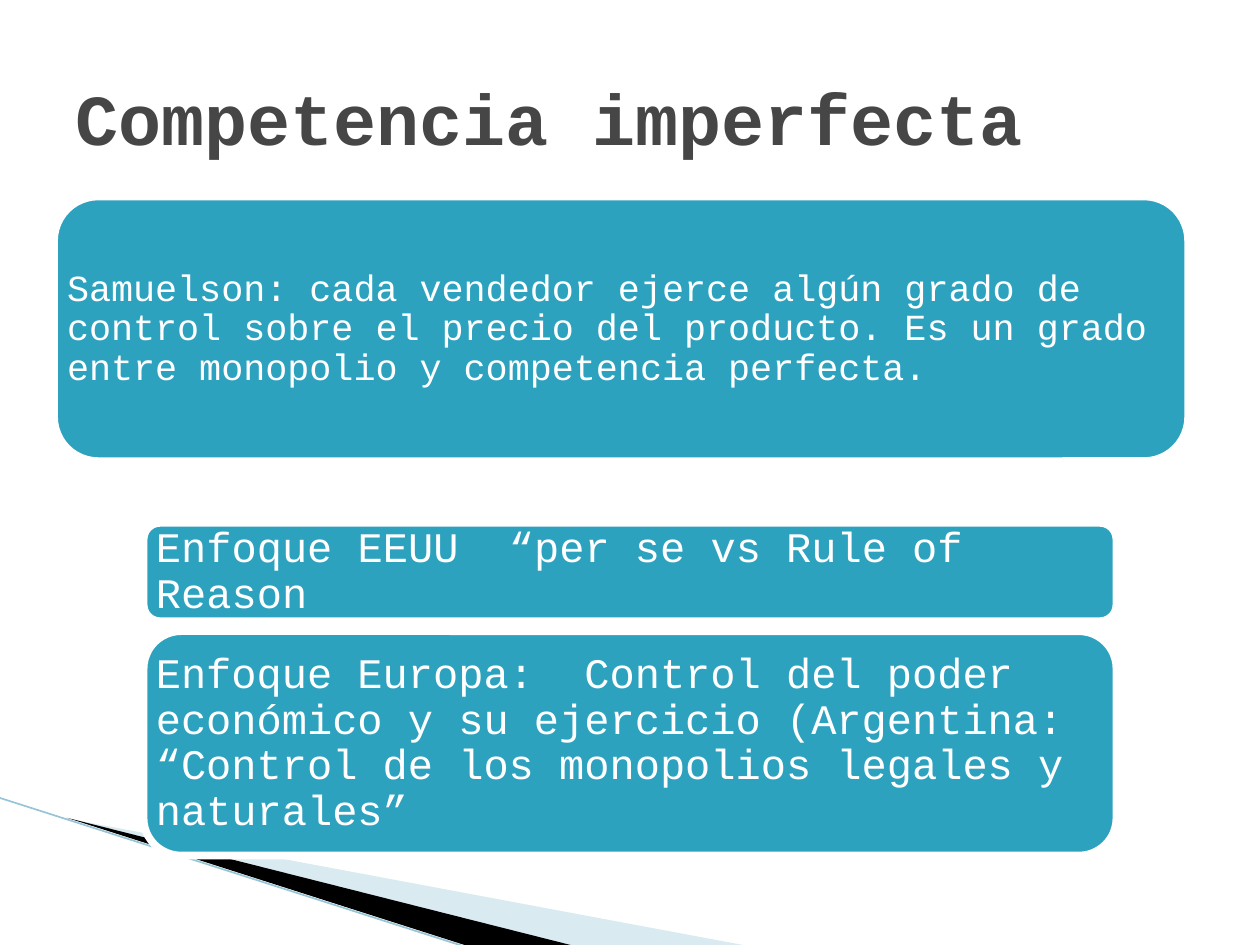
from lxml.etree import SubElement
from pptx import Presentation
from pptx.dml.color import RGBColor
from pptx.enum.shapes import MSO_CONNECTOR, MSO_SHAPE
from pptx.enum.text import MSO_ANCHOR, MSO_AUTO_SIZE, PP_ALIGN
from pptx.oxml.ns import qn
from pptx.util import Inches, Pt


def color(value):
    return RGBColor.from_string(value)


def write_text(shape, text, frame_format, paragraph_format, font_format, font_color):
    frame = shape.text_frame
    frame.text = text
    paragraph = frame.paragraphs[0]
    for target, values in (
        (frame, frame_format),
        (paragraph, paragraph_format),
        (paragraph.font, font_format),
    ):
        for name, value in values.items():
            setattr(target, name, value)
    paragraph.font.color.rgb = color(font_color)


presentation = Presentation()
presentation.slide_width = Inches(10)
presentation.slide_height = Inches(7.5)
slide = presentation.slides.add_slide(presentation.slide_layouts[5])
shapes = slide.shapes

wedges = [
    ("A0CBDC", 40, [(0.55, 6.5), (5.95, 7.51), (4.56, 7.51)]),
    ("000000", 100, [(0.53, 6.49), (4.57, 7.51), (3.72, 7.51)]),
]
for fill, opacity, points in wedges:
    corners = [(Inches(x), Inches(y)) for x, y in points]
    builder = shapes.build_freeform(*corners[0])
    builder.add_line_segments(corners[1:], close=True)
    wedge = builder.convert_to_shape()
    wedge.shadow.inherit = False
    wedge.fill.solid()
    wedge.fill.fore_color.rgb = color(fill)
    wedge.line.fill.background()
    if opacity < 100:
        fill_color = wedge.fill._xPr.find(qn("a:solidFill"))[0]
        SubElement(fill_color, qn("a:alpha"), val=str(opacity * 1000))

diagonal = shapes.add_connector(
    MSO_CONNECTOR.STRAIGHT, Inches(-0.01), Inches(6.33), Inches(3.71), Inches(7.52)
)
diagonal.line.color.rgb = color("97C5D8")
diagonal.line.width = Pt(0.95)
SubElement(diagonal._element.spPr, qn("a:effectLst"))

title = shapes.title
title.left, title.top = Inches(0.5), Inches(0.3)
title.width, title.height = Inches(9), Inches(1.25)
write_text(
    title,
    "Competencia imperfecta",
    {"vertical_anchor": MSO_ANCHOR.MIDDLE, "word_wrap": True, "auto_size": MSO_AUTO_SIZE.NONE},
    {"alignment": PP_ALIGN.LEFT},
    {"name": "Courier New", "size": Pt(41), "bold": True},
    "464646",
)

boxes = [
    (0.43, 1.56, 9, 2.1, 0, 21,
     "Samuelson: cada vendedor ejerce algún grado de control sobre el precio del producto. "
     "Es un grado entre monopolio y competencia perfecta."),
    (1.14, 4.15, 7.72, 0.78, 0.06, 24, "Enfoque EEUU  “per se vs Rule of Reason"),
    (1.14, 5.01, 7.72, 1.78, 0.01, 24,
     "Enfoque Europa:  Control del poder económico y su ejercicio "
     "(Argentina: “Control de los monopolios legales y naturales”"),
]
for left, top, width, height, inset, size, text in boxes:
    box = shapes.add_shape(
        MSO_SHAPE.ROUNDED_RECTANGLE, Inches(left), Inches(top), Inches(width), Inches(height)
    )
    box.shadow.inherit = False
    box.fill.solid()
    box.fill.fore_color.rgb = color("2DA2BF")
    box.line.color.rgb = color("FFFFFF")
    box.line.width = Pt(4.33)
    margins = {f"margin_{side}": Inches(inset) for side in ("left", "top", "right", "bottom")}
    write_text(
        box,
        text,
        {"vertical_anchor": MSO_ANCHOR.MIDDLE, "word_wrap": True, **margins},
        {"alignment": PP_ALIGN.LEFT, "line_spacing": 0.9},
        {"name": "Courier New", "size": Pt(size)},
        "FFFFFF",
    )

presentation.save("out.pptx")
